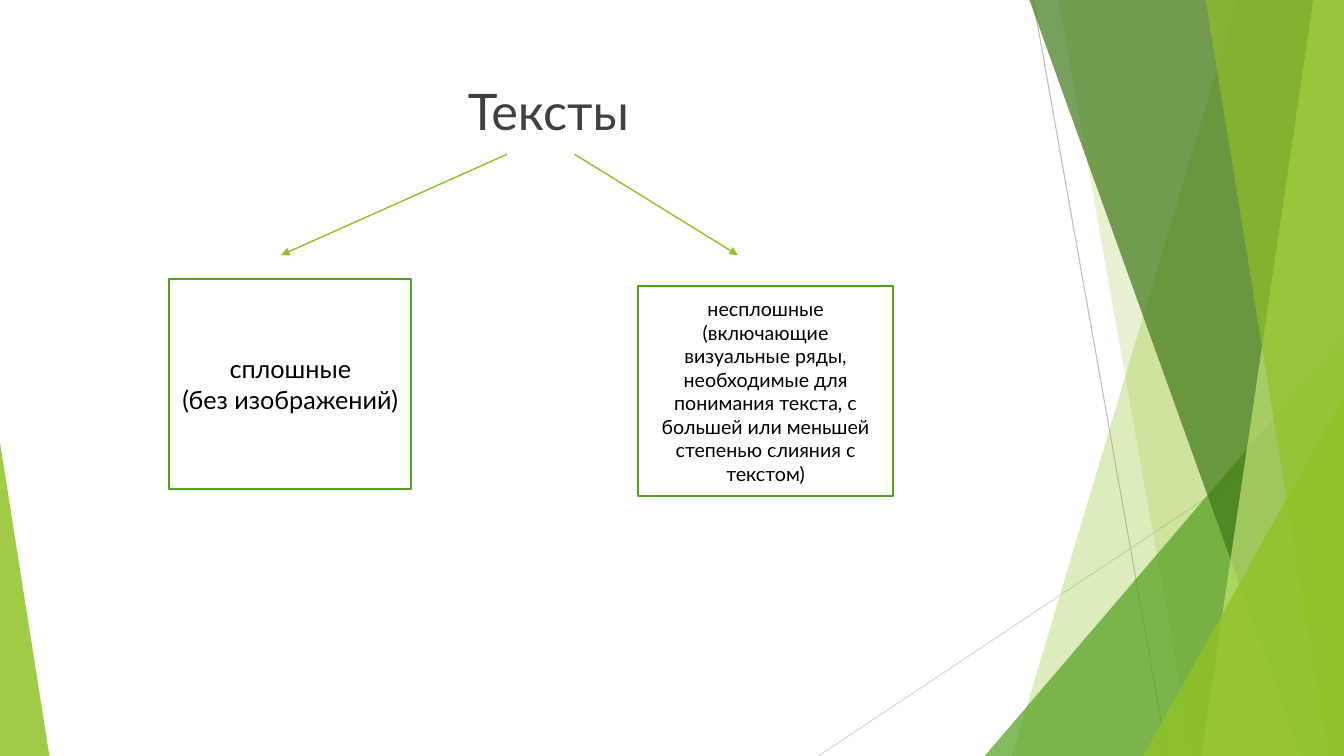
from dataclasses import dataclass

import pptx
import pptx.dml.color
import pptx.enum.shapes
import pptx.enum.text
import pptx.oxml.ns
import pptx.oxml.xmlchemy
import pptx.util

Pt = pptx.util.Pt
qn = pptx.oxml.ns.qn
new_element = pptx.oxml.xmlchemy.OxmlElement
WIDTH, HEIGHT = 960, 540
BLEED_TOP = -0.7
LIME, GREEN = "90C226", "54A021"
FONT = "Lato"


@dataclass
class Line:
    start: tuple[float, float]
    end: tuple[float, float]
    color: str
    weight: float
    arrow: bool = False


@dataclass
class Band:
    """A panel that reaches the right edge of the slide, with a slanted left side."""
    top_left: float
    bottom_left: float
    color: str
    opacity: int


@dataclass
class Corner:
    """A right triangle standing on the bottom edge; apex 0 is left, 1 is right."""
    left: float
    top: float
    width: float
    apex: int
    color: str
    opacity: int


@dataclass
class Card:
    left: float
    top: float
    width: float
    height: float
    size: float
    lines: list[str]


BACK_LINES = [
    Line((738, 0), (833.8, HEIGHT), "BFBFBF", 0.75),
    Line((WIDTH, 290.2), (584.6, HEIGHT), "D9D9D9", 0.75),
]
DECORATION = [
    Band(884.2, 722.9, LIME, 30),
    Band(756, 851.8, LIME, 20),
    Corner(703.4, 239.8, 256.6, 1, GREEN, 72),
    Band(735.1, 929.5, "3F7819", 70),
    Band(938.2, 858.2, "C0E474", 70),
    Band(861.1, 949, LIME, 65),
    Corner(816.5, 283, 143.5, 1, LIME, 80),
    Corner(0, 316.1, 35.3, 0, LIME, 85),
]
ARROWS = [
    Line((362.2, 110.2), (200.9, 182.2), LIME, 1, True),
    Line((410.4, 110.2), (527, 182.2), LIME, 1, True),
]
CARDS = [
    Card(121, 199.4, 172.8, 149.8, 18, ["сплошные", "(без изображений)"]),
    Card(455.8, 204.5, 182.2, 149.8, 14, [
        "несплошные (включающие визуальные ряды, необходимые для понимания "
        "текста, с большей или меньшей степенью слияния с текстом)"]),
]


def rgb(color: str) -> pptx.dml.color.RGBColor:
    return pptx.dml.color.RGBColor.from_string(color)


def fill_solid(shape, color: str, opacity: int = 100) -> None:
    shape.shadow.inherit = False
    shape.fill.solid()
    shape.fill.fore_color.rgb = rgb(color)
    if opacity < 100:
        alpha = new_element("a:alpha")
        alpha.set("val", str(opacity * 1000))
        shape._element.spPr.find(".//" + qn("a:srgbClr")).append(alpha)


def draw_line(slide, line: Line) -> None:
    connector = slide.shapes.add_connector(
        pptx.enum.shapes.MSO_CONNECTOR.STRAIGHT,
        *(Pt(value) for value in line.start + line.end))
    connector.line.color.rgb = rgb(line.color)
    connector.line.width = Pt(line.weight)
    properties = connector._element.spPr
    if line.arrow:
        tail = new_element("a:tailEnd")
        tail.set("type", "triangle")
        properties.find(qn("a:ln")).append(tail)
    properties.append(new_element("a:effectLst"))


def draw_decoration(slide, part: Band | Corner) -> None:
    if isinstance(part, Band):
        builder = slide.shapes.build_freeform(Pt(part.top_left), Pt(BLEED_TOP))
        corners = [(WIDTH, BLEED_TOP), (WIDTH, HEIGHT), (part.bottom_left, HEIGHT)]
        builder.add_line_segments([(Pt(x), Pt(y)) for x, y in corners])
        shape = builder.convert_to_shape()
    else:
        shape = slide.shapes.add_shape(
            pptx.enum.shapes.MSO_SHAPE.ISOSCELES_TRIANGLE, Pt(part.left),
            Pt(part.top), Pt(part.width), Pt(HEIGHT - part.top))
        shape.adjustments[0] = part.apex
    fill_solid(shape, part.color, part.opacity)
    shape.line.fill.background()


def write_text(frame, lines: list[str], size: float, color: str) -> None:
    frame.word_wrap = True
    for index, line in enumerate(lines):
        para = frame.add_paragraph() if index else frame.paragraphs[0]
        para.alignment = pptx.enum.text.PP_ALIGN.CENTER
        span = para.add_run()
        span.text = line
        span.font.name = FONT
        span.font.size = Pt(size)
        span.font.color.rgb = rgb(color)


def draw_card(slide, card: Card) -> None:
    box = slide.shapes.add_shape(
        pptx.enum.shapes.MSO_SHAPE.RECTANGLE, Pt(card.left), Pt(card.top),
        Pt(card.width), Pt(card.height))
    fill_solid(box, "FFFFFF")
    box.line.color.rgb = rgb(GREEN)
    box.line.width = Pt(1.5)
    box.text_frame.vertical_anchor = pptx.enum.text.MSO_ANCHOR.MIDDLE
    write_text(box.text_frame, card.lines, card.size, "000000")


def place_title(slide) -> None:
    title = slide.shapes.title
    title.left, title.top = Pt(53.3), Pt(53.3)
    title.width, title.height = Pt(676.8), Pt(422.6)
    title.text_frame.auto_size = pptx.enum.text.MSO_AUTO_SIZE.NONE
    title.text_frame.vertical_anchor = pptx.enum.text.MSO_ANCHOR.TOP
    write_text(title.text_frame, ["Тексты"], 36, "404040")


def main() -> None:
    deck = pptx.Presentation()
    deck.slide_width, deck.slide_height = Pt(WIDTH), Pt(HEIGHT)
    page = deck.slides.add_slide(deck.slide_layouts.get_by_name("Title Only"))
    place_title(page)
    for line in BACK_LINES:
        draw_line(page, line)
    for part in DECORATION:
        draw_decoration(page, part)
    for card in CARDS:
        draw_card(page, card)
    for arrow in ARROWS:
        draw_line(page, arrow)
    deck.save("out.pptx")


if __name__ == "__main__":
    main()
